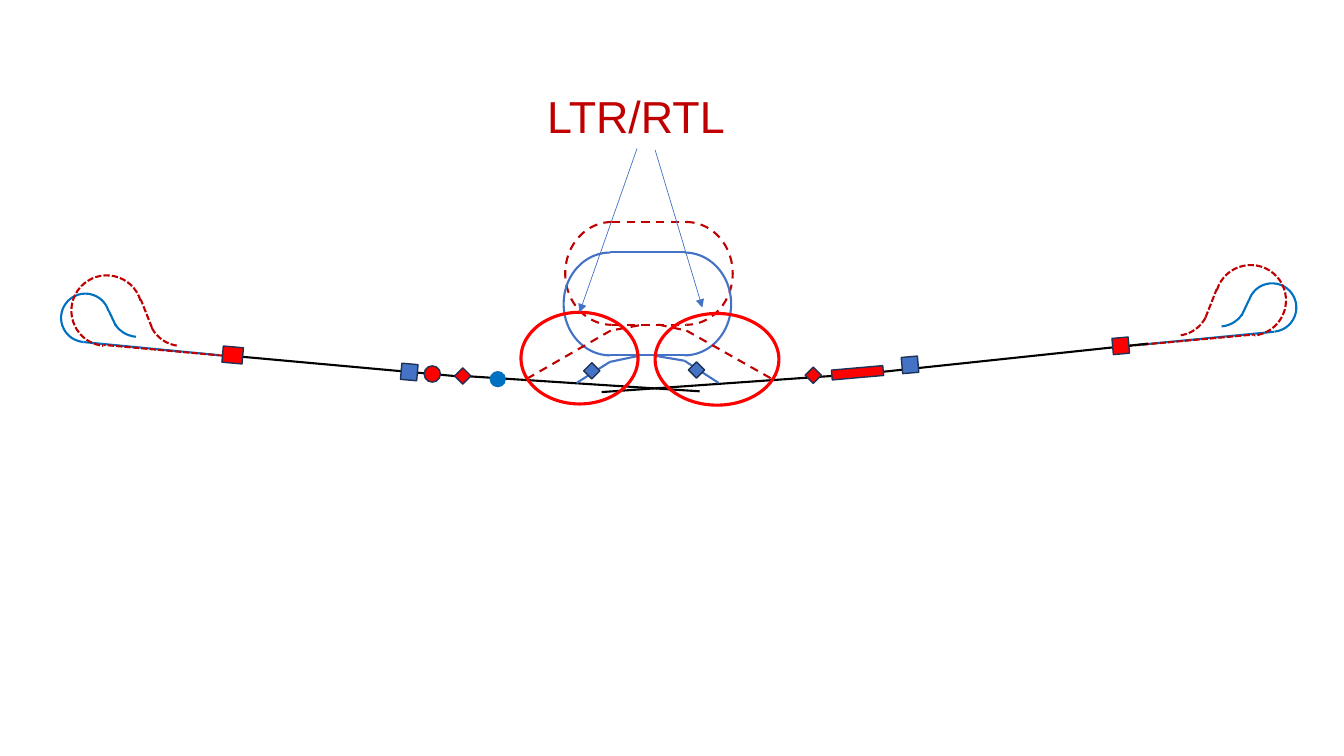
from lxml.etree import SubElement
from pptx import Presentation
from pptx.dml.color import RGBColor
from pptx.enum.dml import MSO_LINE
from pptx.enum.shapes import MSO_CONNECTOR, MSO_SHAPE
from pptx.enum.text import MSO_AUTO_SIZE
from pptx.oxml.ns import qn
from pptx.util import Cm, Pt

AZURE = RGBColor(0x00, 0x70, 0xC0)
BLUE = RGBColor(0x44, 0x72, 0xC4)
NAVY = RGBColor(0x1E, 0x32, 0x56)
CRIMSON = RGBColor(0xC0, 0x00, 0x00)
RED = RGBColor(0xFF, 0x00, 0x00)
BLACK = RGBColor(0x00, 0x00, 0x00)
DASH, SHORT = MSO_LINE.DASH, MSO_LINE.SQUARE_DOT
RECT, OVAL, DIAMOND = MSO_SHAPE.RECTANGLE, MSO_SHAPE.OVAL, MSO_SHAPE.DIAMOND

# Content, all lengths in cm
LABEL = "LTR/RTL"
LABEL_BOX = (13.54, 2.11, 5.03, 1.63)
LABEL_FONT = {"name": "Arial", "size": Pt(32)}

# Right-hand loops: colour, dash, big arc, small arc, lines
LOOPS = [
    (AZURE, None, (31.45, 7.14, 1.22, 1.22), (30.05, 7.01, 1.35, 1.22),
     [((31.29, 7.95), (31.47, 7.57)), ((28.7, 8.69), (32.11, 8.36))]),
    (CRIMSON, SHORT, (30.63, 6.68, 1.78, 1.78), (28.78, 6.76, 1.7, 1.7),
     [((30.38, 8.0), (30.66, 7.29)), ((28.17, 8.74), (31.6, 8.43))]),
]
BIG, SMALL, HALF = (201.73, 89.28), (32.79, 89.28), (179.89, 0)
TILT = 355
MIRROR, DROP = 34.21, 0.26  # left loops: x becomes MIRROR - x, y grows by DROP

# Rings: colour, dash, shift across, shift down
RINGS = [(CRIMSON, DASH, 0, 0), (BLUE, None, -0.04, 0.77)]
RING_ARCS = [(16.0, 90, False), (14.12, 270, True)]
RING_TOP, RING_BASE, RING_X = 5.59, 8.18, (15.42, 17.3)
ARC_Y, ARC_W, ARC_H = 5.72, 2.59, 2.34

# Tracks: colour, dash, points
TRACKS = [
    (BLACK, None, [(11.63, 9.47), (17.63, 9.86)]),
    (BLACK, None, [(15.16, 9.88), (21.31, 9.45)]),
    (CRIMSON, DASH, [(16.59, 8.18), (17.3, 8.33), (19.51, 9.58)]),
    (CRIMSON, DASH, [(16.1, 8.2), (15.39, 8.33), (13.18, 9.6)]),
    (BLUE, None, [(16.08, 8.97), (15.37, 9.12), (14.53, 9.65)]),
    (BLUE, None, [(16.54, 8.97), (17.25, 9.09), (18.11, 9.65)]),
    (BLACK, None, [(21.95, 9.4), (28.93, 8.66)]),
    (BLACK, None, [(11.73, 9.5), (6.1, 8.99)]),
]

# Markers: kind, box, turn, fill, edge
SIDE = 0.41
MARKERS = [
    (RECT, (10.11, 9.17, SIDE, SIDE), 5, BLUE, NAVY),
    (RECT, (5.61, 8.74, 0.51, SIDE), 5, RED, NAVY),
    (RECT, (22.73, 8.99, SIDE, SIDE), TILT, BLUE, NAVY),
    (RECT, (28.04, 8.51, SIDE, SIDE), TILT, RED, NAVY),
    (OVAL, (12.34, 9.35, SIDE, SIDE), 0, AZURE, None),
    (OVAL, (10.69, 9.22, SIDE, SIDE), 0, RED, NAVY),
    (RECT, (20.96, 9.27, 1.3, 0.25), TILT, RED, NAVY),
    (DIAMOND, (14.71, 9.14, SIDE, SIDE), 0, BLUE, NAVY),
    (DIAMOND, (17.35, 9.12, SIDE, SIDE), 0, BLUE, NAVY),
    (DIAMOND, (11.46, 9.27, SIDE, SIDE), 0, RED, NAVY),
    (DIAMOND, (20.29, 9.25, SIDE, SIDE), 0, RED, NAVY),
]
ZONES = [(13.13, 7.87, 2.95, 2.31), (16.51, 7.9, 3.12, 2.31)]
ARROWS = [((16.05, 3.73), (14.6, 7.87)), ((16.51, 3.78), (17.7, 7.75))]

deck = Presentation()
deck.slide_width, deck.slide_height = Cm(33.87), Cm(19.05)
slide = deck.slides.add_slide(deck.slide_layouts[6])
shapes = slide.shapes


def stroke(line, color, width, dash=None):
    line.color.rgb = color
    line.width = Pt(width)
    if dash:
        line.dash_style = dash


def draw(kind, box, turn=0, fill=None, edge=None, width=1, dash=None):
    item = shapes.add_shape(kind, *map(Cm, box))
    item.shadow.inherit = False
    item.rotation = turn
    if fill:
        item.fill.solid()
        item.fill.fore_color.rgb = fill
    else:
        item.fill.background()
    if edge:
        stroke(item.line, edge, width, dash)
    else:
        item.line.fill.background()
    return item


def arc(box, span, turn, flip, color, dash):
    item = draw(MSO_SHAPE.ARC, box, turn, None, color, 1.5, dash)
    for i, angle in enumerate(span):
        item.adjustments[i] = angle * 0.6
    if flip:
        item.element.spPr.xfrm.set("flipH", "1")


def link(start, end, color, dash=None, width=1.5):
    item = shapes.add_connector(MSO_CONNECTOR.STRAIGHT, *map(Cm, start + end))
    stroke(item.line, color, width, dash)
    SubElement(item.element.spPr, qn("a:effectLst"))
    return item


# Loops at both ends, the left one mirrored
for flip in (False, True):
    for color, dash, big, small, lines in LOOPS:
        for (x, y, w, h), span in ((big, BIG), (small, SMALL)):
            box = (MIRROR - x - w, y + DROP, w, h) if flip else (x, y, w, h)
            arc(box, span, 360 - TILT if flip else TILT, flip, color, dash)
        for ends in lines:
            if flip:
                ends = [(MIRROR - x, y + DROP) for x, y in ends]
            link(*ends, color, dash)

# Rings in the middle
for color, dash, dx, dy in RINGS:
    for x, turn, flip in RING_ARCS:
        arc((x + dx, ARC_Y + dy, ARC_W, ARC_H), HALF, turn, flip, color, dash)
    for y in (RING_TOP, RING_BASE):
        link(*[(x + dx, y + dy) for x in RING_X], color, dash)

# Tracks
for color, dash, points in TRACKS:
    for start, end in zip(points, points[1:]):
        link(start, end, color, dash)

# Markers
for marker in MARKERS:
    draw(*marker)

# Label
label = shapes.add_textbox(*map(Cm, LABEL_BOX))
frame = label.text_frame
frame.word_wrap = False
frame.auto_size = MSO_AUTO_SIZE.SHAPE_TO_FIT_TEXT
run = frame.paragraphs[0].add_run()
run.text = LABEL
for key, value in LABEL_FONT.items():
    setattr(run.font, key, value)
run.font.color.rgb = CRIMSON

# Ringed zones and the arrows to them
zones = [draw(OVAL, box, edge=RED, width=2.25) for box in ZONES]
arrows = [link(start, end, BLUE, width=0.5) for start, end in ARROWS]
for arrow in arrows:
    SubElement(arrow.line._get_or_add_ln(), qn("a:tailEnd"), type="triangle")
arrows[0].begin_connect(label, 2)
arrows[0].end_connect(zones[0], 0)

deck.save("out.pptx")
